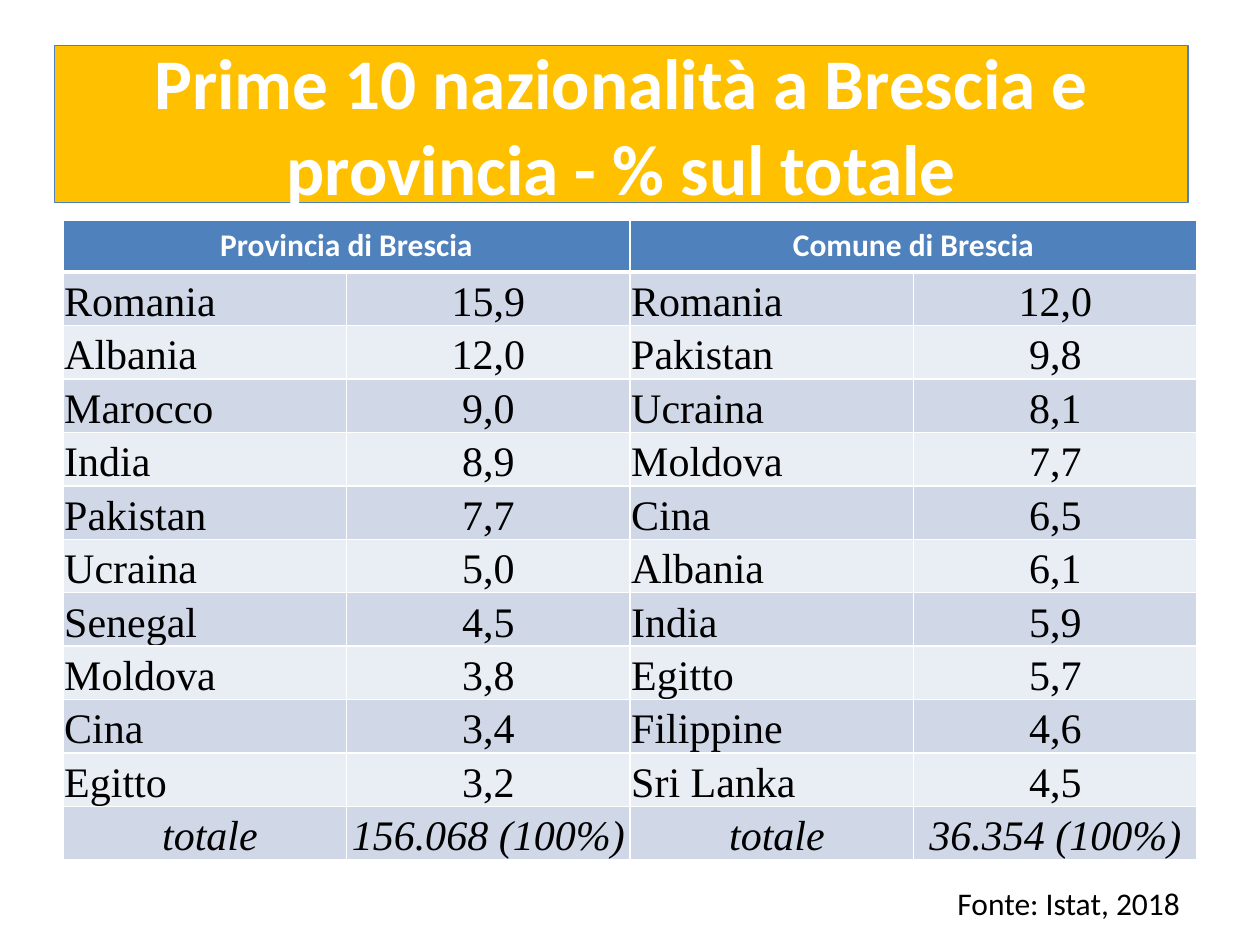
import dataclasses

import lxml.etree
import pptx
import pptx.dml.color
import pptx.enum.text
import pptx.oxml.ns
import pptx.util

Inches = pptx.util.Inches
Pt = pptx.util.Pt
ALIGN = pptx.enum.text.PP_ALIGN
ANCHOR = pptx.enum.text.MSO_ANCHOR


@dataclasses.dataclass(frozen=True)
class Theme:
    amber: str = "FFC000"
    blue: str = "4F81BD"
    bands: tuple = ("D0D8E8", "E9EDF4")
    white: str = "FFFFFF"
    black: str = "000000"
    sans: str = "Calibri"
    serif: str = "Times New Roman"
    title_size: float = 40.7
    table_size: float = 24
    small_size: float = 18
    line_width: float = 1
    header_line_width: float = 3


THEME = Theme()
HEADERS = ("Provincia di Brescia", "Comune di Brescia")
NATIONALITIES = (
    ("Romania", "15,9", "Romania", "12,0"),
    ("Albania", "12,0", "Pakistan", "9,8"),
    ("Marocco", "9,0", "Ucraina", "8,1"),
    ("India", "8,9", "Moldova", "7,7"),
    ("Pakistan", "7,7", "Cina", "6,5"),
    ("Ucraina", "5,0", "Albania", "6,1"),
    ("Senegal", "4,5", "India", "5,9"),
    ("Moldova", "3,8", "Egitto", "5,7"),
    ("Cina", "3,4", "Filippine", "4,6"),
    ("Egitto", "3,2", "Sri Lanka", "4,5"),
)
TOTALS = (" totale", "156.068 (100%)", " totale", "36.354 (100%)")


def rgb(color):
    return pptx.dml.color.RGBColor.from_string(color)


def write_text(frame, text, size=THEME.small_size, font=THEME.sans,
               color=THEME.black, bold=False, italic=False,
               align=ALIGN.LEFT, spacing=None):
    paragraph = frame.paragraphs[0]
    paragraph.alignment = align
    if spacing:
        paragraph.line_spacing = spacing
    run = paragraph.add_run()
    run.text = text
    run.font.size = Pt(size)
    run.font.name = font
    run.font.bold = bold
    run.font.italic = italic
    run.font.color.rgb = rgb(color)


def set_borders(cell, top=THEME.line_width, bottom=THEME.line_width):
    properties = cell._tc.get_or_add_tcPr()
    widths = {"a:lnL": THEME.line_width, "a:lnR": THEME.line_width,
              "a:lnT": top, "a:lnB": bottom}
    qn = pptx.oxml.ns.qn
    for tag, width in widths.items():
        line = lxml.etree.SubElement(properties, qn(tag), w=str(Pt(width)))
        fill = lxml.etree.SubElement(line, qn("a:solidFill"))
        lxml.etree.SubElement(fill, qn("a:srgbClr"), val=THEME.white)


def fill_cell(cell, color):
    cell.fill.solid()
    cell.fill.fore_color.rgb = rgb(color)


def add_title(slide, text):
    title = slide.shapes.title
    title.left, title.top = Inches(0.43), Inches(0.36)
    title.width, title.height = Inches(9), Inches(1.25)
    title.fill.solid()
    title.fill.fore_color.rgb = rgb(THEME.amber)
    title.line.color.rgb = rgb(THEME.blue)
    title.line.width = Pt(0.75)
    frame = title.text_frame
    frame.word_wrap = True
    frame.auto_size = pptx.enum.text.MSO_AUTO_SIZE.NONE
    frame.vertical_anchor = ANCHOR.MIDDLE
    write_text(frame, text, size=THEME.title_size, color=THEME.white,
               bold=True, align=ALIGN.CENTER)


def add_header_row(table):
    for column in range(4):
        cell = table.cell(0, column)
        set_borders(cell, bottom=THEME.header_line_width)
        fill_cell(cell, THEME.blue)
    for index, text in enumerate(HEADERS):
        cell = table.cell(0, 2 * index)
        cell.merge(table.cell(0, 2 * index + 1))
        write_text(cell.text_frame, text, color=THEME.white, bold=True,
                   align=ALIGN.CENTER)


def add_body_row(table, row, values, is_total=False):
    top = THEME.header_line_width if row == 1 else THEME.line_width
    for column, text in enumerate(values):
        cell = table.cell(row, column)
        set_borders(cell, top=top)
        fill_cell(cell, THEME.bands[(row - 1) % 2])
        cell.margin_left = cell.margin_right = Inches(0.01)
        cell.margin_top = cell.margin_bottom = 0
        cell.vertical_anchor = ANCHOR.MIDDLE if is_total else ANCHOR.BOTTOM
        centered = is_total or column % 2 == 1
        write_text(cell.text_frame, text, size=THEME.table_size,
                   font=THEME.serif, italic=is_total, spacing=1.15,
                   align=ALIGN.CENTER if centered else ALIGN.LEFT)


def add_nationality_table(slide):
    row_count = len(NATIONALITIES) + 2
    row_height = Inches(0.41)
    table = slide.shapes.add_table(
        row_count, 4, Inches(0.5), Inches(1.75), Inches(9),
        row_height * row_count).table
    for row in table.rows:
        row.height = row_height
    add_header_row(table)
    for row, values in enumerate(NATIONALITIES, start=1):
        add_body_row(table, row, values)
    add_body_row(table, row_count - 1, TOTALS, is_total=True)


def add_source_note(slide, text):
    box = slide.shapes.add_textbox(
        Inches(7.5), Inches(6.97), Inches(1.99), Inches(0.4))
    box.text_frame.word_wrap = False
    box.text_frame.auto_size = pptx.enum.text.MSO_AUTO_SIZE.SHAPE_TO_FIT_TEXT
    write_text(box.text_frame, text)


def main():
    presentation = pptx.Presentation()
    presentation.slide_width = Inches(10)
    presentation.slide_height = Inches(7.5)
    slide = presentation.slides.add_slide(
        presentation.slide_layouts.get_by_name("Title Only"))
    add_title(slide, "Prime 10 nazionalità a Brescia e provincia - % sul totale")
    add_nationality_table(slide)
    add_source_note(slide, "Fonte: Istat, 2018")
    presentation.save("out.pptx")


if __name__ == "__main__":
    main()
